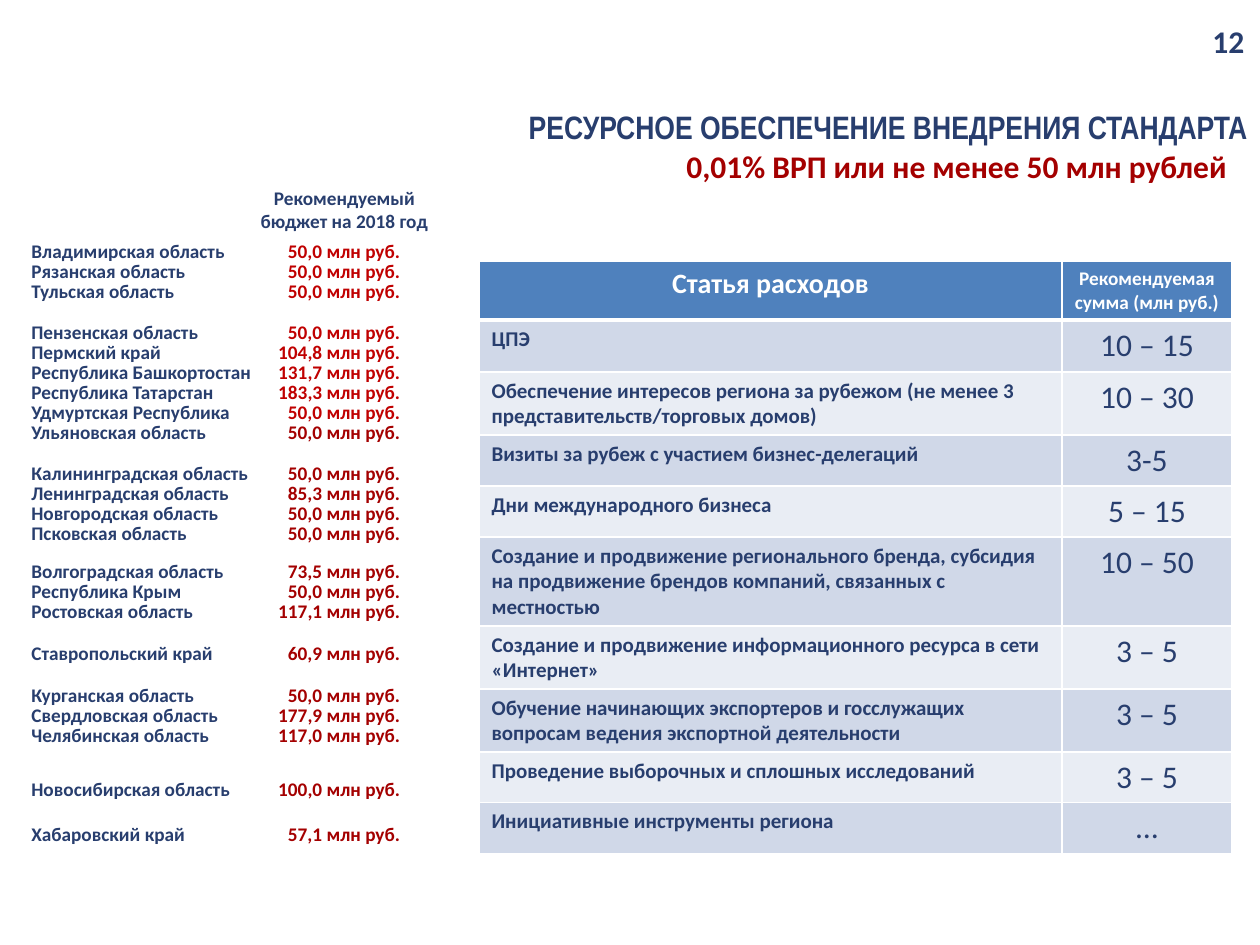
from lxml.etree import SubElement
from pptx import Presentation
from pptx.dml.color import RGBColor
from pptx.enum.text import MSO_ANCHOR as Anchor, MSO_AUTO_SIZE as AutoSize, PP_ALIGN as Align
from pptx.oxml.ns import qn
from pptx.util import Pt

EMU_PER_PX = 914400 // 126
COLORS = {
    "navy": "283E6E", "dark_red": "A40000", "red": "C00000", "white": "FFFFFF",
    "header": "4F81BD", "odd": "D0D8E8", "even": "E9EDF4",
}
LINE_STEP = 20
AMOUNT_TAB = 369
REGION_GROUPS = [
    (233, "red", [("Владимирская область", "50,0"), ("Рязанская область", "50,0"),
                  ("Тульская область", "50,0")]),
    (314, "red", [("Пензенская область", "50,0"), ("Пермский край", "104,8"),
                  ("Республика Башкортостан", "131,7"), ("Республика Татарстан", "183,3"),
                  ("Удмуртская Республика", "50,0")]),
    (414, "dark_red", [("Ульяновская область", "50,0")]),
    (455, "dark_red", [("Калининградская область", "50,0"), ("Ленинградская область", "85,3"),
                       ("Новгородская область", "50,0"), ("Псковская область", "50,0")]),
    (553, "dark_red", [("Волгоградская область", "73,5"), ("Республика Крым", "50,0"),
                       ("Ростовская область", "117,1")]),
    (635, "dark_red", [("Ставропольский край", "60,9")]),
    (677, "dark_red", [("Курганская область", "50,0"), ("Свердловская область", "177,9"),
                       ("Челябинская область", "117,0")]),
    (771, "dark_red", [("Новосибирская область", "100,0")]),
    (816, "dark_red", [("Хабаровский край", "57,1")]),
]
COLUMN_WIDTHS = [583, 170]
EXPENSES = [
    (58, "Статья расходов", "Рекомендуемая сумма (млн руб.)"),
    (52, "ЦПЭ", "10 – 15"),
    (62, "Обеспечение интересов региона за рубежом (не менее 3 представительств/торговых домов)",
     "10 – 30"),
    (51, "Визиты за рубеж с участием бизнес-делегаций", "3-5"),
    (51, "Дни международного бизнеса", "5 – 15"),
    (89, "Создание и продвижение регионального бренда, субсидия на продвижение брендов компаний, "
         "связанных с местностью", "10 – 50"),
    (63, "Создание и продвижение информационного ресурса в сети «Интернет»", "3 – 5"),
    (63, "Обучение начинающих экспортеров и госслужащих вопросам ведения экспортной деятельности",
     "3 – 5"),
    (50, "Проведение выборочных и сплошных исследований", "3 – 5"),
    (51, "Инициативные инструменты региона", "…"),
]


def px(*lengths):
    return [length * EMU_PER_PX for length in lengths]


def style(font, size, color, bold=True, name="Calibri"):
    font.size, font.bold, font.name = Pt(size), bold, name
    font.color.rgb = RGBColor.from_string(COLORS[color])


def add_title(page, text):
    title = page.shapes.title
    title.left, title.top, title.width, title.height = px(326, 97, 934, 59)
    frame = title.text_frame
    frame.text = text
    frame.auto_size, frame.vertical_anchor = AutoSize.NONE, Anchor.TOP
    para = frame.paragraphs[0]
    para.alignment, para.line_spacing = Align.RIGHT, 1.1
    style(para.runs[0].font, 18.5, "navy", name="Arial Narrow")


def add_label(page, place, text, size, color, align=Align.LEFT, wrap=True):
    box = page.shapes.add_textbox(*px(*place))
    frame = box.text_frame
    frame.text, frame.word_wrap = text, wrap
    para = frame.paragraphs[0]
    para.alignment = align
    style(para.runs[0].font, size, color)
    return para


def add_region(page, top, name, amount, color):
    para = add_label(page, (19, top, 403, 37), name, 11, "navy")
    tabs = SubElement(para._p.get_or_add_pPr(), qn("a:tabLst"))
    SubElement(tabs, qn("a:tab"), pos=str(AMOUNT_TAB * EMU_PER_PX), algn="r")
    span = para.add_run()
    span.text = f"\t{amount} млн руб."
    style(span.font, 11, color)


def add_borders(cell, bottom):
    for side, width in (("L", 1), ("R", 1), ("T", 1), ("B", bottom)):
        line = SubElement(cell._tc.get_or_add_tcPr(), qn(f"a:ln{side}"), w=str(Pt(width)))
        fill = SubElement(line, qn("a:solidFill"))
        SubElement(fill, qn("a:srgbClr"), val=COLORS["white"])


def fill_cell(cell, text, fill, size, color, bold, align, bottom):
    add_borders(cell, bottom)
    cell.fill.solid()
    cell.fill.fore_color.rgb = RGBColor.from_string(COLORS[fill])
    cell.text = text
    para = cell.text_frame.paragraphs[0]
    para.alignment = align
    style(para.runs[0].font, size, color, bold)


def add_expenses(page):
    height = sum(row[0] for row in EXPENSES)
    place = px(479, 261, sum(COLUMN_WIDTHS), height)
    table = page.shapes.add_table(len(EXPENSES), len(COLUMN_WIDTHS), *place).table
    for column, width in zip(table.columns, px(*COLUMN_WIDTHS)):
        column.width = width
    for index, (height, item, amount) in enumerate(EXPENSES):
        table.rows[index].height = px(height)[0]
        item_cell, amount_cell = table.rows[index].cells
        if index == 0:
            fill_cell(item_cell, item, "header", 16, "white", True, Align.CENTER, 3)
            fill_cell(amount_cell, amount, "header", 11, "white", True, Align.CENTER, 3)
        else:
            fill = "odd" if index % 2 else "even"
            fill_cell(item_cell, item, fill, 12, "navy", True, Align.LEFT, 1)
            fill_cell(amount_cell, amount, fill, 18, "navy", False, Align.CENTER, 1)


def main():
    """Build the slide on regional export budgets and save it."""
    deck = Presentation()
    deck.slide_width, deck.slide_height = px(1260, 945)
    page = deck.slides.add_slide(deck.slide_layouts[5])
    add_title(page, "РЕСУРСНОЕ ОБЕСПЕЧЕНИЕ ВНЕДРЕНИЯ СТАНДАРТА")
    add_label(page, (674, 141, 572, 89), "0,01% ВРП или не менее 50 млн рублей", 18, "dark_red",
              wrap=False)
    for top, color, regions in REGION_GROUPS:
        for index, (name, amount) in enumerate(regions):
            add_region(page, top + index * LINE_STEP, name, amount, color)
    add_label(page, (242, 180, 205, 59), "Рекомендуемый бюджет на 2018 год", 11, "navy",
              Align.CENTER)
    add_expenses(page)
    add_label(page, (1200, 16, 58, 50), "12", 18, "navy", wrap=False)
    deck.save("out.pptx")


if __name__ == "__main__":
    main()
